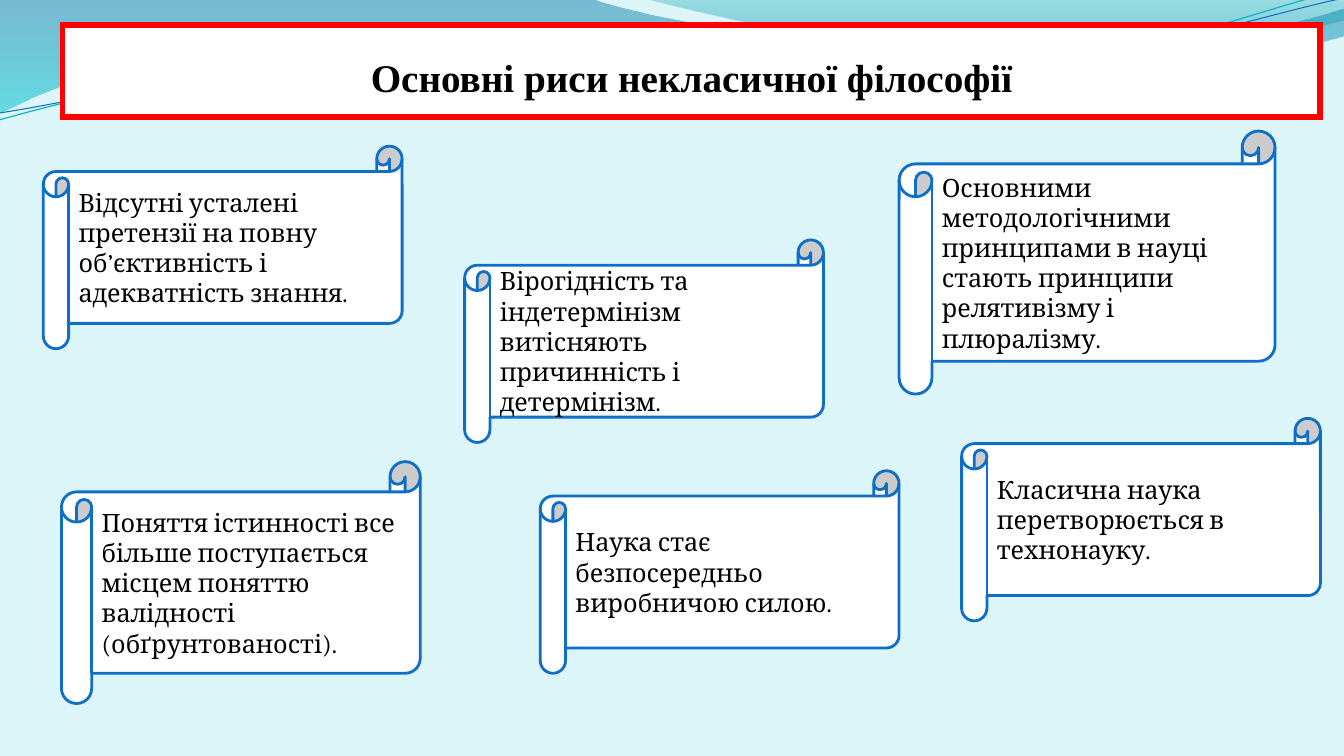
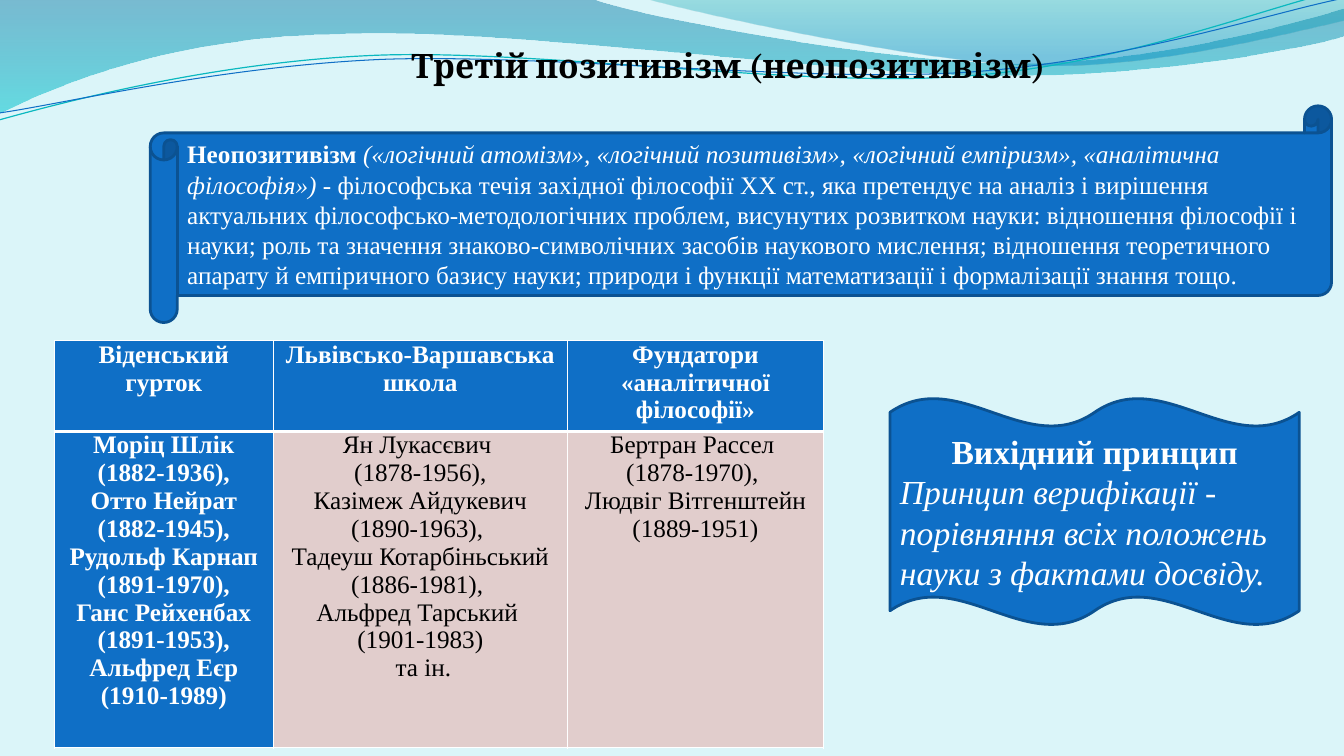
import pptx
import pptx.dml.color
import pptx.enum.shapes
import pptx.enum.text
import pptx.oxml
import pptx.oxml.ns
import pptx.util
from lxml import etree

Inches = pptx.util.Inches
Pt = pptx.util.Pt
ALIGN = pptx.enum.text.PP_ALIGN
ANCHOR = pptx.enum.text.MSO_ANCHOR
SHAPE = pptx.enum.shapes.MSO_SHAPE
qn = pptx.oxml.ns.qn

SERIF, BOOK = "Times New Roman", "Cambria"
BLACK, WHITE, RED = "000000", "FFFFFF", "FF0000"
BLUE, DARK_BLUE, TEAL = "0F6FC6", "0B5292", "0AB8BF"
PALE_BLUE, PALE_ROSE = "DBF5F9", "E1CDCC"

# Wave outlines in inches: a pair is a straight step, six numbers a Bezier step
WIDE_WAVE = [
    (0, 0), (5.87, -0.01),
    (6.34, 0.17, 8.85, 0.63, 10.11, 0.63), (11.38, 0.63, 12.78, 0.26, 13.33, 0.09),
    (13.35, 0.36),
    (13.11, 0.44, 11.6, 0.76, 9.94, 0.75), (8.29, 0.75, 5.09, 0.28, 3.43, 0.34),
    (1.72, 0.36, 0.61, 0.83, -0.01, 1.13), (0, 0)]
RIGHT_WAVE = [
    (6.39, -0.01),
    (6.79, 0.11, 9.09, 0.62, 10.25, 0.65), (11.41, 0.69, 12.82, 0.32, 13.33, 0.21),
    (13.33, 0), (6.39, -0.01)]
TEAL_CURVE = [
    (-0.01, 1.19),
    (0.64, 1.01, 2.11, 0.62, 3.69, 0.55), (5.27, 0.48, 7.9, 0.87, 9.5, 0.76),
    (11.1, 0.66, 12.52, 0.08, 13.31, -0.1)]
BLUE_CURVE = [
    (0, 1.12),
    (0.63, 1.03, 2.18, 0.66, 3.78, 0.59), (5.37, 0.53, 7.96, 0.82, 9.55, 0.72),
    (11.15, 0.62, 12.55, 0.14, 13.34, -0.02)]

FEATURES = [
    ((0.43, 1.45, 3.56, 2.01),
     "Відсутні усталені претензії на повну об’єктивність і адекватність знання."),
    ((4.61, 2.38, 3.56, 2.01),
     "Вірогідність та індетермінізм витісняють причинність і детермінізм."),
    ((0.61, 4.58, 3.56, 2.4),
     "Поняття істинності все більше поступається місцем поняттю валідності "
     "(обґрунтованості)."),
    ((9.54, 4.15, 3.56, 2.01), "Класична наука перетворюється в технонауку."),
    ((5.36, 4.67, 3.56, 2.01), "Наука стає безпосередньо виробничою силою."),
    ((8.92, 1.3, 3.73, 2.61),
     "Основними методологічними принципами в науці стають принципи релятивізму "
     "і плюралізму."),
]

DEFINITION = [
    ("Неопозитивізм ", "b"),
    ("(«логічний атомізм», «логічний позитивізм», «логічний емпіризм», "
     "«аналітична філософія»)", "i"),
    (" - філософська течія західної філософії ХХ ст., яка претендує на аналіз і "
     "вирішення актуальних філософсько-методологічних проблем, висунутих розвитком "
     "науки: відношення філософії і науки; роль та значення знаково-символічних "
     "засобів наукового мислення; відношення теоретичного апарату й емпіричного "
     "базису науки; природи і функції математизації і формалізації знання тощо.", ""),
]

SCHOOLS = [
    ("Віденський гурток", 2.17,
     ["Моріц Шлік", "(1882-1936),", "Отто Нейрат", "(1882-1945),",
      "Рудольф Карнап", "(1891-1970),", "Ганс Рейхенбах", "(1891-1953),",
      "Альфред Еєр", "(1910-1989)"]),
    ("Львівсько-Варшавська школа", 2.92,
     ["Ян Лукасєвич ", "(1878-1956),", " Казімеж Айдукевич ", "(1890-1963), ",
      "Тадеуш Котарбіньський (1886-1981), ", "Альфред Тарський ", "(1901-1983)",
      " та ін."]),
    ("Фундатори «аналітичної філософії»", 2.54,
     ["Бертран Рассел ", "(1878-1970), ", "Людвіг Вітгенштейн (1889-1951)"]),
]


def rgb(value):
    return pptx.dml.color.RGBColor.from_string(value)


def inches(box):
    return [Inches(length) for length in box]


def paint(shape, fill, line, width):
    shape.fill.solid()
    shape.fill.fore_color.rgb = rgb(fill)
    shape.line.color.rgb = rgb(line)
    shape.line.width = Pt(width)


def format_paragraph(paragraph, font, size, color, bold=None, italic=None,
                     align=ALIGN.LEFT, spacing=None):
    paragraph.alignment = align
    if spacing:
        paragraph.line_spacing = Pt(spacing)
    paragraph.font.name = font
    paragraph.font.size = Pt(size)
    paragraph.font.color.rgb = rgb(color)
    paragraph.font.bold = bold
    paragraph.font.italic = italic


# Wave decoration on the master

def trace(slide, steps, close):
    """Draw straight and Bezier steps as one freeform."""
    points = [step[i:i + 2] for step in steps[1:] for i in range(0, len(step), 2)]
    builder = slide.shapes.build_freeform(*inches(steps[0]))
    builder.add_line_segments([inches(point) for point in points], close=close)
    shape = builder.convert_to_shape()
    shape.shadow.inherit = False
    # Join the three segments of each Bezier step into one curve
    segments = iter(list(shape.element.iter(qn("a:lnTo"))))
    for step in steps[1:]:
        group = [next(segments) for _ in range(len(step) // 2)]
        if len(group) == 3:
            curve = etree.Element(qn("a:cubicBezTo"))
            group[0].addprevious(curve)
            for segment in group:
                curve.append(segment[0])
                segment.getparent().remove(segment)
    return shape


def gradient_wave(slide, steps, stops):
    shape = trace(slide, steps, True)
    shape.line.fill.background()
    shape.fill.gradient()
    shape.fill.gradient_angle = 270
    for stop, (position, color, opacity) in zip(shape.fill.gradient_stops, stops):
        stop.position = position
        stop.color.rgb = rgb(color)
    colors = shape.element.spPr.iter(qn("a:srgbClr"))
    for node, (position, color, opacity) in zip(list(colors), stops):
        etree.SubElement(node, qn("a:alpha")).set("val", str(opacity * 1000))
    return shape


def curve_line(slide, steps, color, width):
    shape = trace(slide, steps, False)
    shape.fill.background()
    shape.line.color.rgb = rgb(color)
    shape.line.width = Pt(width)
    return shape


def decorate_master(presentation, slide):
    master = presentation.slide_master
    master.background.fill.solid()
    master.background.fill.fore_color.rgb = rgb(PALE_BLUE)
    waves = [
        gradient_wave(slide, WIDE_WAVE, [(0, "0074A1", 45), (1, "00C6CF", 55)]),
        gradient_wave(slide, RIGHT_WAVE, [(0, "00A1A9", 30), (0.8, "008BBF", 45)]),
        curve_line(slide, TEAL_CURVE, TEAL, 0.85),
        curve_line(slide, BLUE_CURVE, BLUE, 0.75),
    ]
    for number, wave in enumerate(waves):
        wave.element.nvSpPr.cNvPr.set("id", str(100 + number))
        master.shapes.element.append(wave.element)


# Parts shared by the slides

def place_title(slide, box, text, font, size, anchor=ANCHOR.MIDDLE):
    title = slide.shapes.title
    title.left, title.top, title.width, title.height = inches(box)
    frame = title.text_frame
    frame.text = text
    frame.word_wrap = True
    frame.auto_size = pptx.enum.text.MSO_AUTO_SIZE.NONE
    frame.vertical_anchor = anchor
    format_paragraph(frame.paragraphs[0], font, size, BLACK, bold=True, align=ALIGN.CENTER)
    return title


def add_panel(slide, kind, box, fill, line):
    shape = slide.shapes.add_shape(kind, *inches(box))
    shape.shadow.inherit = False
    paint(shape, fill, line, 2)
    shape.text_frame.word_wrap = True
    shape.text_frame.vertical_anchor = ANCHOR.MIDDLE
    return shape.text_frame


def feature_scroll(slide, box, text):
    frame = add_panel(slide, SHAPE.HORIZONTAL_SCROLL, box, WHITE, BLUE)
    frame.text = text
    format_paragraph(frame.paragraphs[0], BOOK, 18, BLACK, spacing=21.6)


def definition_scroll(slide, box):
    frame = add_panel(slide, SHAPE.HORIZONTAL_SCROLL, box, BLUE, DARK_BLUE)
    paragraph = frame.paragraphs[0]
    format_paragraph(paragraph, SERIF, 18, WHITE, spacing=21.6)
    for text, style in DEFINITION:
        run = paragraph.add_run()
        run.text = text
        run.font.bold = style == "b"
        run.font.italic = style == "i"


def principle_wave(slide, box):
    frame = add_panel(slide, SHAPE.DOUBLE_WAVE, box, BLUE, DARK_BLUE)
    frame.text = ("Вихідний принцип\nПринцип верифікації - порівняння всіх положень "
                  "науки з фактами досвіду.")
    heading, body = frame.paragraphs
    format_paragraph(heading, SERIF, 24, WHITE, bold=True, align=ALIGN.CENTER, spacing=28.8)
    format_paragraph(body, SERIF, 24, WHITE, italic=True, spacing=28.8)


# Table of schools

def fill_cell(cell, lines, strong, fill, borders):
    properties = cell._tc.get_or_add_tcPr()
    for side, width in borders.items():
        properties.append(pptx.oxml.parse_xml(
            f'<a:ln{side} xmlns:a="http://schemas.openxmlformats.org/drawingml/2006/main" '
            f'w="{Pt(width)}"><a:solidFill><a:srgbClr val="{WHITE}"/></a:solidFill>'
            f'</a:ln{side}>'))
    cell.fill.solid()
    cell.fill.fore_color.rgb = rgb(fill)
    cell.margin_left = cell.margin_right = Inches(0.07)
    cell.margin_top = cell.margin_bottom = 0
    cell.text_frame.text = "\n".join(lines)
    for paragraph in cell.text_frame.paragraphs:
        format_paragraph(paragraph, SERIF, 18, WHITE if strong else BLACK, bold=strong,
                         align=ALIGN.CENTER, spacing=19.9)


def schools_table(slide, box):
    table = slide.shapes.add_table(2, len(SCHOOLS), *inches(box)).table
    table.horz_banding = False
    header_height = 0.9
    table.rows[0].height = Inches(header_height)
    table.rows[1].height = Inches(box[3] - header_height)
    for index, (school, width, members) in enumerate(SCHOOLS):
        table.columns[index].width = Inches(width)
        fill_cell(table.cell(0, index), [school], True, BLUE,
                  {"L": 1, "R": 1, "T": 1, "B": 3})
        first = index == 0
        fill_cell(table.cell(1, index), members, first, BLUE if first else PALE_ROSE,
                  {"L": 1, "R": 1, "T": 3, "B": 1})


# Slides

def features_slide(slide):
    title = place_title(slide, (0.62, 0.25, 12.48, 0.91),
                        "Основні риси некласичної філософії", SERIF, 28, ANCHOR.BOTTOM)
    title.text_frame.margin_bottom = Inches(0.16)
    paint(title, WHITE, RED, 4.25)
    outline = title.element.spPr.find(qn("a:ln"))
    etree.SubElement(outline, qn("a:miter")).set("lim", "800000")
    for box, text in FEATURES:
        feature_scroll(slide, box, text)


def neopositivism_slide(slide):
    place_title(slide, (1.57, 0.39, 11.31, 0.51),
                "Третій позитивізм (неопозитивізм)", BOOK, 24)
    definition_scroll(slide, (1.49, 1.05, 11.72, 2.15))
    schools_table(slide, (0.54, 3.38, 7.63, 4.04))
    principle_wave(slide, (8.83, 3.95, 4.06, 2.25))


def main():
    presentation = pptx.Presentation()
    presentation.slide_width = Inches(40 / 3)
    presentation.slide_height = Inches(7.5)
    title_only = presentation.slide_layouts[5]
    first, second = [presentation.slides.add_slide(title_only) for _ in range(2)]
    decorate_master(presentation, first)
    features_slide(first)
    neopositivism_slide(second)
    presentation.save("out.pptx")


if __name__ == "__main__":
    main()
